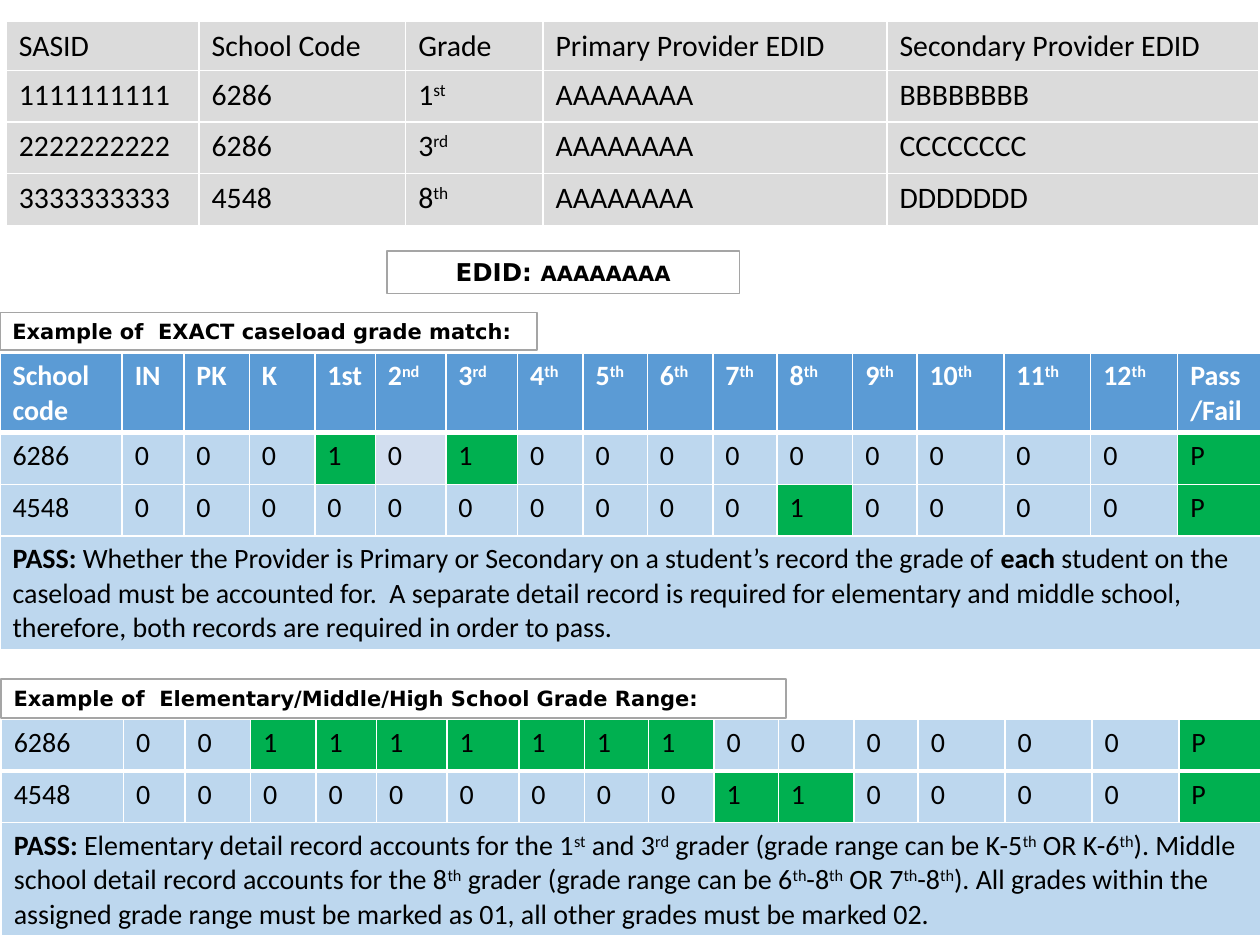
import dataclasses

import lxml.etree
import pptx
import pptx.dml.color
import pptx.enum.text
import pptx.oxml.ns
import pptx.util

Inches = pptx.util.Inches
Pt = pptx.util.Pt


@dataclasses.dataclass(frozen=True)
class Theme:
    table_font: str = "Calibri"
    label_font: str = "DejaVu Sans"
    roster_size: int = 17
    grade_size: int = 16
    edid_size: int = 14
    label_size: int = 12
    text: str = "000000"
    heading_text: str = "FFFFFF"
    rule: str = "FFFFFF"
    outline: str = "A5A5A5"
    roster: str = "DBDBDB"
    heading: str = "5B9BD5"
    record: str = "BDD7EE"
    unmarked: str = "D2DEEF"
    marked: str = "00B050"


def rgb(color):
    return pptx.dml.color.RGBColor.from_string(color)


class SlideBuilder:
    def __init__(self, theme, slide):
        self.theme = theme
        self.slide = slide

    def format_font(self, paragraph, name, size, color, bold=False):
        font = paragraph.font
        font.name, font.size, font.bold = name, Pt(size), bold
        font.color.rgb = rgb(color)

    def add_runs(self, paragraph, marked_text):
        """Add text where *...* is bold and ^...^ is superscript."""
        for i, strong_part in enumerate(marked_text.split("*")):
            for j, part in enumerate(strong_part.split("^")):
                if not part:
                    continue
                run = paragraph.add_run()
                run.text = part
                if i % 2:
                    run.font.bold = True
                if j % 2:
                    run._r.get_or_add_rPr().set("baseline", "30000")

    def borders(self, cell, top, bottom):
        properties = cell._tc.get_or_add_tcPr()
        sides = (("lnL", 1), ("lnR", 1), ("lnT", top), ("lnB", bottom))
        for position, (side, width) in enumerate(sides):
            line = lxml.etree.Element(pptx.oxml.ns.qn(f"a:{side}"), w=str(Pt(width)))
            fill = lxml.etree.SubElement(line, pptx.oxml.ns.qn("a:solidFill"))
            lxml.etree.SubElement(fill, pptx.oxml.ns.qn("a:srgbClr"), val=self.theme.rule)
            properties.insert(position, line)

    def table(self, left, top, widths, heights, rows, size, fill_of, heading=False, first_rule=3):
        """Add a table; a row with a single entry spans every column."""
        frame = self.slide.shapes.add_table(
            len(rows), len(widths), Inches(left), Inches(top),
            Inches(sum(widths)), Inches(sum(heights)))
        grid = frame.table
        grid.first_row = grid.horz_banding = False
        for column, width in zip(grid.columns, widths):
            column.width = Inches(width)
        for row, height in zip(grid.rows, heights):
            row.height = Inches(height)

        for r, entries in enumerate(rows):
            if len(entries) == 1:
                grid.cell(r, 0).merge(grid.cell(r, len(widths) - 1))
            for c, entry in enumerate(entries):
                cell = grid.cell(r, c)
                cell.fill.solid()
                cell.fill.fore_color.rgb = rgb(fill_of(r, c, entry))
                self.borders(cell, first_rule if r == 1 else 1, first_rule if r == 0 else 1)
                paragraph = cell.text_frame.paragraphs[0]
                is_heading = heading and r == 0
                color = self.theme.heading_text if is_heading else self.theme.text
                self.format_font(paragraph, self.theme.table_font, size, color, is_heading)
                self.add_runs(paragraph, entry)

    def label(self, left, top, width, height, text, size):
        box = self.slide.shapes.add_textbox(
            Inches(left), Inches(top), Inches(width), Inches(height))
        box.line.color.rgb = rgb(self.theme.outline)
        box.line.width = Pt(1)
        box.text_frame.word_wrap = True
        box.text_frame.auto_size = pptx.enum.text.MSO_AUTO_SIZE.SHAPE_TO_FIT_TEXT
        paragraph = box.text_frame.paragraphs[0]
        self.format_font(paragraph, self.theme.label_font, size, self.theme.text, True)
        self.add_runs(paragraph, text)
        return paragraph


def grade_record(school, marked_columns):
    """One school's row: a flag for each grade column 1-15, then the result."""
    flags = ["1" if column in marked_columns else "0" for column in range(1, 16)]
    return [school, *flags, "P"]


def main():
    deck = pptx.Presentation()
    deck.slide_width, deck.slide_height = Inches(10), Inches(7.5)
    theme = Theme()
    builder = SlideBuilder(theme, deck.slides.add_slide(deck.slide_layouts[6]))

    # Student roster
    roster = [
        ["SASID", "School Code", "Grade", "Primary Provider EDID", "Secondary Provider EDID"],
        ["1111111111", "6286", "1^st^", "AAAAAAAA", "BBBBBBBB"],
        ["2222222222", "6286", "3^rd^", "AAAAAAAA", "CCCCCCCC"],
        ["3333333333", "4548", "8^th^", "AAAAAAAA", "DDDDDDD"],
    ]
    builder.table(0.05, 0.17, [1.53, 1.64, 1.09, 2.73, 2.95], [0.38] + [0.41] * 3, roster,
                  theme.roster_size, lambda r, c, entry: theme.roster, first_rule=1)

    # Provider being checked
    provider = builder.label(3.07, 1.99, 2.8, 0.34, "EDID: *AAAAAAAA*", theme.edid_size)
    provider.alignment = pptx.enum.text.PP_ALIGN.CENTER
    provider.runs[1].font.size = Pt(theme.label_size)

    def record_fill(r, c, entry):
        return theme.marked if entry in ("1", "P") else theme.record

    def exact_fill(r, c, entry):
        if r == 0:
            return theme.heading
        return theme.unmarked if (r, c) == (1, 5) else record_fill(r, c, entry)

    grade_widths = [0.97, 0.49, 0.52, 0.52, 0.48, 0.56, 0.57, 0.52, 0.51,
                    0.52, 0.51, 0.6, 0.51] + [0.69] * 4

    # Exact grade match
    headings = ["School code", "IN", "PK", "K", "1st", "2^nd^", "3^rd^",
                *(f"{grade}^th^" for grade in range(4, 13)), "Pass/Fail"]
    exact_note = (
        "*PASS:* Whether the Provider is Primary or Secondary on a student’s record the grade "
        "of *each* student on the caseload must be accounted for.  A separate detail record is "
        "required for elementary and middle school, therefore, both records are required in "
        "order to pass.")
    builder.table(0, 2.8, grade_widths, [0.63, 0.41, 0.41, 0.9],
                  [headings, grade_record("6286", {4, 6}), grade_record("4548", {11}),
                   [exact_note]],
                  theme.grade_size, exact_fill, heading=True)

    # Grade range match
    range_note = (
        "*PASS: *Elementary detail record accounts for the 1^st^ and 3^rd^ grader (grade range "
        "can be K-5^th^ OR K-6^th^). Middle  school detail record accounts for the 8^th^ grader "
        "(grade range can be 6^th^-8^th^ OR 7^th^-8^th^). All grades within the assigned grade "
        "range must be marked as 01, all other grades must be marked 02.")
    builder.table(0.01, 5.71, grade_widths, [0.41, 0.41, 0.9],
                  [grade_record("6286", range(3, 10)), grade_record("4548", {10, 11}),
                   [range_note]],
                  theme.grade_size, record_fill)

    # Example labels
    builder.label(0, 2.48, 4.26, 0.3, "Example of  EXACT caseload grade match:",
                  theme.label_size)
    builder.label(0.01, 5.39, 6.23, 0.31,
                  "Example of  Elementary/Middle/High School Grade Range:", theme.label_size)

    deck.save("out.pptx")


if __name__ == "__main__":
    main()
